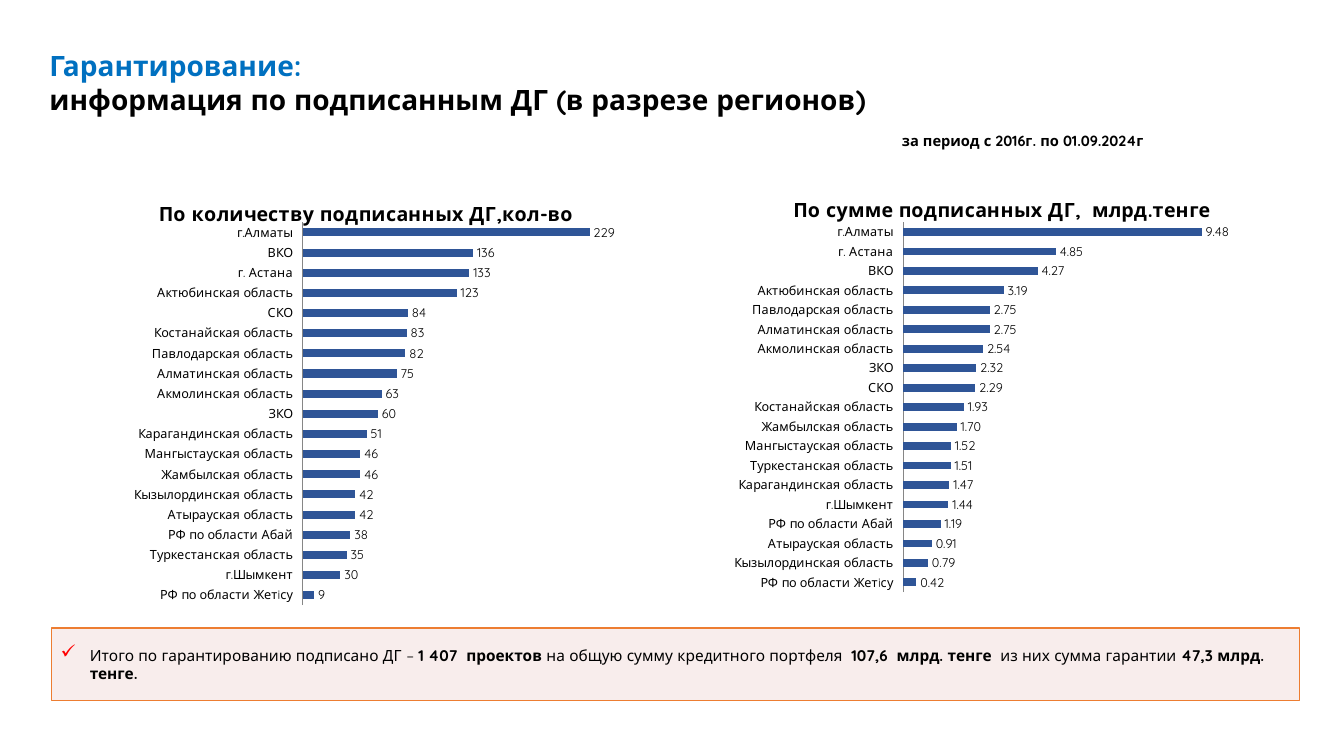
"""Build the slide on guarantees by region: two ranked bar charts and a summary."""
from lxml.etree import SubElement
from pptx import Presentation
from pptx.chart.data import CategoryChartData
from pptx.dml.color import RGBColor
from pptx.enum.chart import XL_CHART_TYPE, XL_LABEL_POSITION, XL_TICK_LABEL_POSITION, XL_TICK_MARK
from pptx.enum.shapes import MSO_SHAPE
from pptx.enum.text import MSO_ANCHOR, PP_ALIGN
from pptx.oxml import parse_xml
from pptx.oxml.ns import nsdecls, qn
from pptx.util import Pt

FONT = "Quicksand"
COLORS = {"accent": "0070C0", "text": "000000", "bar": "2F5597", "axis": "868686",
          "note": "F2DCDB", "border": "ED7D31", "check": "FF0000"}

HEADING = [("Гарантирование: ", "accent"),
           ("информация по подписанным ДГ (в разрезе регионов)", "text")]
PERIOD = "за период с 2016г. по 01.09.2024г"
SUMMARY = [("Итого по гарантированию подписано ДГ – ", False), ("1 407  проектов ", True),
           ("на общую сумму кредитного портфеля  ", False), ("107,6  млрд. тенге  ", True),
           ("из них сумма гарантии", False), (" 47,3 млрд. тенге.", True)]

COUNTS = [
    ("г.Алматы", 229), ("ВКО", 136), ("г. Астана", 133), ("Актюбинская область", 123),
    ("СКО", 84), ("Костанайская область", 83), ("Павлодарская область", 82),
    ("Алматинская область", 75), ("Акмолинская область", 63), ("ЗКО", 60),
    ("Карагандинская область", 51), ("Мангыстауская область", 46),
    ("Жамбылская область", 46), ("Кызылординская область", 42),
    ("Атырауская область", 42), ("РФ по области Абай", 38),
    ("Туркестанская область", 35), ("г.Шымкент", 30), ("РФ по области Жетiсу", 9)]
AMOUNTS = [
    ("г.Алматы", 9.48), ("г. Астана", 4.85), ("ВКО", 4.27), ("Актюбинская область", 3.19),
    ("Павлодарская область", 2.75), ("Алматинская область", 2.75),
    ("Акмолинская область", 2.54), ("ЗКО", 2.32), ("СКО", 2.29),
    ("Костанайская область", 1.93), ("Жамбылская область", 1.7),
    ("Мангыстауская область", 1.52), ("Туркестанская область", 1.51),
    ("Карагандинская область", 1.47), ("г.Шымкент", 1.44), ("РФ по области Абай", 1.19),
    ("Атырауская область", 0.91), ("Кызылординская область", 0.79),
    ("РФ по области Жетiсу", 0.42)]

RANKINGS = [
    {"title": "По количеству подписанных ДГ,кол-во ", "regions": COUNTS, "top": 250,
     "format": "General", "box": (51.8, 126.7, 421.9, 321.8),
     "title_at": (0.14, 0.04), "plot": (0.39, 0.1, 0.53, 0.85)},
    {"title": "По сумме подписанных ДГ,  млрд.тенге", "regions": AMOUNTS, "top": 10,
     "format": "#,##0.00", "box": (465.1, 121, 450, 314.6),
     "title_at": (0.22, 0.05), "plot": (0.4, 0.12, 0.5, 0.84)}]


def rgb(color):
    return RGBColor.from_string(COLORS[color])


def points(box):
    return [Pt(length) for length in box]


def style(font, size, bold=False, color="text"):
    font.name, font.size, font.bold = FONT, Pt(size), bold
    font.color.rgb = rgb(color)


def add_run(paragraph, text, size, bold, color="text"):
    run = paragraph.add_run()
    run.text = text
    style(run.font, size, bold, color)


def set_layout(parent, index, place, inner=False):
    for previous in parent.findall(qn("c:layout")):
        parent.remove(previous)
    layout = parse_xml(f"<c:layout {nsdecls('c')}><c:manualLayout/></c:layout>")
    settings = [("layoutTarget", "inner")] if inner else []
    keys = "xywh"[:len(place)]
    settings += [(key + "Mode", "edge") for key in keys if key in "xy"]
    settings += zip(keys, place)
    for tag, value in settings:
        SubElement(layout[0], qn("c:" + tag)).set("val", str(value))
    parent.insert(index, layout)


def add_ranking(slide, ranking):
    regions = ranking["regions"][::-1]
    data = CategoryChartData(number_format=ranking["format"])
    data.categories = [region for region, _ in regions]
    data.add_series("Series 1", [value for _, value in regions])
    chart = slide.shapes.add_chart(
        XL_CHART_TYPE.BAR_CLUSTERED, *points(ranking["box"]), data).chart
    style(chart.font, 9)
    chart.has_legend = False

    heading = chart.chart_title
    add_run(heading.text_frame.paragraphs[0], ranking["title"], 14, True)
    heading.include_in_layout = False
    set_layout(heading._element, 1, ranking["title_at"])

    names = chart.category_axis
    names.major_tick_mark = names.minor_tick_mark = XL_TICK_MARK.NONE
    names.tick_label_position = XL_TICK_LABEL_POSITION.LOW
    names.format.line.color.rgb = rgb("axis")
    names.format.line.width = Pt(0.75)
    style(names.tick_labels.font, 9)

    scale = chart.value_axis
    scale.minimum_scale, scale.maximum_scale = 0, ranking["top"]
    scale.has_major_gridlines = False
    scale.visible = False

    bars = chart.plots[0]
    bars.gap_width = 150
    bars.vary_by_categories = False
    fill = bars.series[0].format.fill
    fill.solid()
    fill.fore_color.rgb = rgb("bar")
    bars.has_data_labels = True
    labels = bars.data_labels
    labels.show_value = True
    labels.position = XL_LABEL_POSITION.OUTSIDE_END
    labels.number_format = ranking["format"]
    labels.number_format_is_linked = False
    style(labels.font, 9)
    set_layout(bars._element.getparent(), 0, ranking["plot"], inner=True)


def add_heading(slide):
    heading = slide.shapes.title
    heading.left, heading.top, heading.width, heading.height = points((28.1, 31, 617.8, 55.4))
    heading.text_frame.vertical_anchor = MSO_ANCHOR.TOP
    paragraph = heading.text_frame.paragraphs[0]
    paragraph.alignment = PP_ALIGN.LEFT
    paragraph.line_spacing = 1.0
    for index, (text, color) in enumerate(HEADING):
        if index:
            paragraph.add_line_break()
        add_run(paragraph, text, 20, True, color)


def add_period(slide):
    period = slide.shapes.add_textbox(*points((637.2, 90.7, 190, 20.2))).text_frame
    period.word_wrap = False
    add_run(period.paragraphs[0], PERIOD, 10.5, True)


def add_summary(slide):
    summary = slide.shapes.add_shape(
        MSO_SHAPE.RECTANGLE, *points((36.7, 448.6, 891.4, 51.8)))
    summary.shadow.inherit = False
    summary.fill.solid()
    summary.fill.fore_color.rgb = rgb("note")
    tint = summary._element.spPr.find(qn("a:solidFill"))[0]
    SubElement(tint, qn("a:alpha")).set("val", "50000")
    summary.line.color.rgb = rgb("border")
    summary.line.width = Pt(1)

    frame = summary.text_frame
    frame.word_wrap = True
    frame.vertical_anchor = MSO_ANCHOR.MIDDLE
    frame.margin_left = frame.margin_right = Pt(5.8)
    frame.margin_top = frame.margin_bottom = Pt(2.9)
    paragraph = frame.paragraphs[0]
    paragraph.alignment = PP_ALIGN.LEFT
    paragraph.space_after = Pt(6)
    properties = paragraph._p.get_or_add_pPr()
    properties.set("marL", str(Pt(21.6)))
    properties.set("indent", str(-Pt(20.9)))
    bullet_color = SubElement(properties, qn("a:buClr"))
    SubElement(bullet_color, qn("a:srgbClr")).set("val", COLORS["check"])
    SubElement(properties, qn("a:buSzPct")).set("val", "125000")
    SubElement(properties, qn("a:buChar")).set("char", "✓")
    for text, bold in SUMMARY:
        add_run(paragraph, text, 11, bold)


def main():
    deck = Presentation()
    deck.slide_width, deck.slide_height = Pt(960), Pt(540)
    slide = deck.slides.add_slide(deck.slide_layouts[5])
    add_heading(slide)
    add_period(slide)
    add_summary(slide)
    for ranking in RANKINGS:
        add_ranking(slide, ranking)
    deck.save("out.pptx")


if __name__ == "__main__":
    main()
